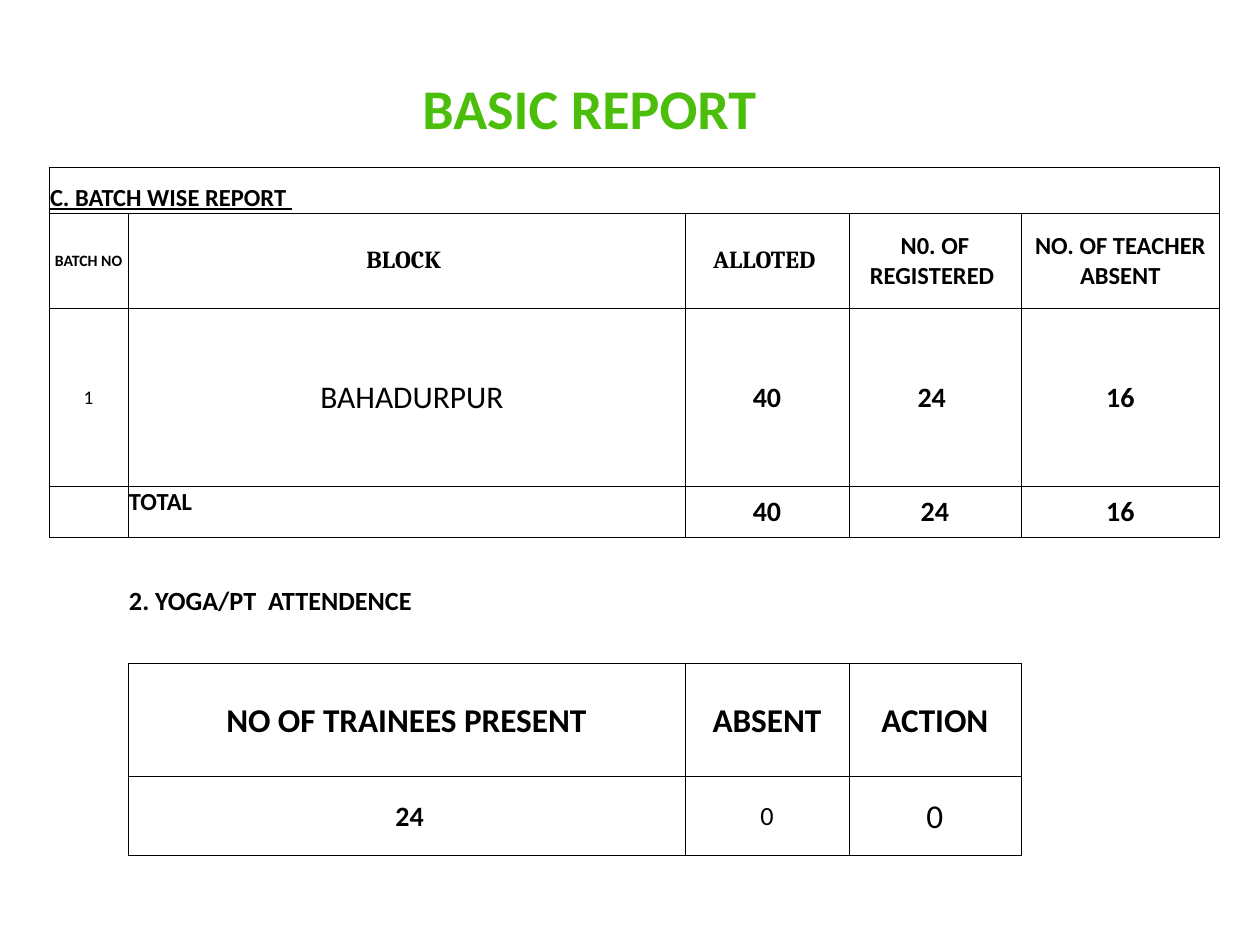
"""Build the basic report slide with its batch and attendance table."""
from lxml.etree import SubElement
from pptx import Presentation
from pptx.dml.color import RGBColor
from pptx.enum.text import MSO_ANCHOR, PP_ALIGN
from pptx.oxml.ns import qn
from pptx.util import Pt

PX = 914400 // 126
BLACK = RGBColor(0x00, 0x00, 0x00)
WHITE = RGBColor(0xFF, 0xFF, 0xFF)
GREEN = RGBColor(0x4A, 0xBE, 0x0A)
NO_STYLE = "{2D5ABB26-0587-4C30-8999-92F81FD0307C}"
LEFT, CENTER = PP_ALIGN.LEFT, PP_ALIGN.CENTER
TOP, MIDDLE, BOTTOM = MSO_ANCHOR.TOP, MSO_ANCHOR.MIDDLE, MSO_ANCHOR.BOTTOM

COLS = [79, 557, 164, 172, 199]
ROWS = [46, 95, 178, 51, 33, 62, 32, 113, 79]
SPANS = [(0, 0, 4), (5, 1, 3)]


def write(tf, text, size=14, font="Calibri", color=BLACK, bold=True,
          underline=False, align=CENTER):
    """Write one formatted paragraph into a text frame."""
    p = tf.paragraphs[0]
    p.alignment = align
    r = p.add_run()
    r.text = text
    r.font.size, r.font.name = Pt(size), font
    r.font.bold, r.font.underline = bold, underline
    r.font.color.rgb = color


def entry(text, size=14, fill=None, anchor=MIDDLE, indent=1, **style):
    """Describe the content of one table cell."""
    return dict(text=text, fill=fill, anchor=anchor, indent=indent,
                style=dict(size=size, **style))


def framed(row, col):
    """Tell whether a cell belongs to one of the two ruled grids."""
    return (0 <= row <= 3 and 0 <= col <= 4) or (7 <= row <= 8 and 1 <= col <= 3)


class Deck:
    """Hold the style and the current slide."""

    def __init__(self, width, height):
        self.prs = Presentation()
        self.prs.slide_width, self.prs.slide_height = width * PX, height * PX
        self.s = self.prs.slides.add_slide(self.prs.slide_layouts[6])

    def text(self, x, y, w, h, text, **style):
        """Add a vertically centred text box."""
        sp = self.s.shapes.add_textbox(x * PX, y * PX, w * PX, h * PX)
        tf = sp.text_frame
        tf.word_wrap = True
        tf.vertical_anchor = MIDDLE
        write(tf, text, **style)

    def table(self, x, y, cols, rows, spans, entries):
        """Add a table whose entries are keyed by row and column."""
        frame = self.s.shapes.add_table(len(rows), len(cols), x * PX, y * PX,
                                        sum(cols) * PX, sum(rows) * PX)
        table = frame.table
        table.first_row = table.horz_banding = False
        table._tbl.tblPr.find(qn("a:tableStyleId")).text = NO_STYLE
        for column, width in zip(table.columns, cols):
            column.width = width * PX
        for row, height in zip(table.rows, rows):
            row.height = height * PX
        for row, first, last in spans:
            table.cell(row, first).merge(table.cell(row, last))
        for row in range(len(rows)):
            for col in range(len(cols)):
                self.cell(table.cell(row, col), row, col, entries.get((row, col)))

    def cell(self, cell, row, col, item):
        """Rule, fill and write one cell."""
        self.borders(cell, row, col)
        cell.margin_left = cell.margin_right = cell.margin_top = PX
        cell.margin_bottom = 0
        if item and item["fill"] is not None:
            cell.fill.solid()
            cell.fill.fore_color.rgb = item["fill"]
        else:
            cell.fill.background()
        if item and item["text"]:
            cell.margin_left = item["indent"] * PX
            cell.vertical_anchor = item["anchor"]
            write(cell.text_frame, item["text"], **item["style"])
        else:
            p = cell.text_frame.paragraphs[0]
            SubElement(p._p, qn("a:endParaRPr"), sz="800")

    def borders(self, cell, row, col):
        """Draw each side that touches a ruled grid."""
        tcPr = cell._tc.get_or_add_tcPr()
        for side, dy, dx in (("L", 0, -1), ("R", 0, 1), ("T", -1, 0), ("B", 1, 0)):
            ln = SubElement(tcPr, qn(f"a:ln{side}"), w=str(Pt(0.5)))
            if framed(row, col) or framed(row + dy, col + dx):
                fill = SubElement(ln, qn("a:solidFill"))
                SubElement(fill, qn("a:srgbClr"), val=str(BLACK))
            else:
                SubElement(ln, qn("a:noFill"))


def main():
    """Build and save the slide."""
    batch_head = [
        entry("BATCH NO", 9, WHITE),
        entry("BLOCK ", 14, WHITE, font="Cambria"),
        entry("ALLOTED ", 14, WHITE, font="Cambria"),
        entry("N0. OF REGISTERED ", 14, WHITE),
        entry("NO. OF TEACHER ABSENT", 14, WHITE),
    ]
    batch = [entry("1", 11, WHITE, bold=False),
             entry("BAHADURPUR", 18, indent=12, bold=False),
             entry("40", 16), entry("24 ", 16), entry("16", 16)]
    total = [entry("", fill=WHITE),
             entry("TOTAL", 14, WHITE, anchor=TOP, align=LEFT),
             entry("40", 16), entry("24", 16), entry("16", 16)]
    yoga_head = [entry(text, 19, WHITE)
                 for text in ("NO OF TRAINEES PRESENT", "ABSENT", "ACTION")]
    yoga = [entry(" 24", 16), entry("0", 15, bold=False),
            entry("0", 19, WHITE, bold=False)]
    entries = {
        (0, 0): entry("C. BATCH WISE REPORT ", 14, WHITE, anchor=BOTTOM,
                      align=LEFT, underline=True),
        (5, 1): entry("2. YOGA/PT  ATTENDENCE", 15, align=LEFT),
    }
    for row, first, items in ((1, 0, batch_head), (2, 0, batch), (3, 0, total),
                              (7, 1, yoga_head), (8, 1, yoga)):
        entries.update({(row, col): item for col, item in enumerate(items, first)})

    deck = Deck(1260, 945)
    deck.text(54, 66, 1071, 82, "BASIC REPORT", size=32, color=GREEN)
    deck.table(49, 167, COLS, ROWS, SPANS, entries)
    deck.prs.save("out.pptx")


if __name__ == "__main__":
    main()
